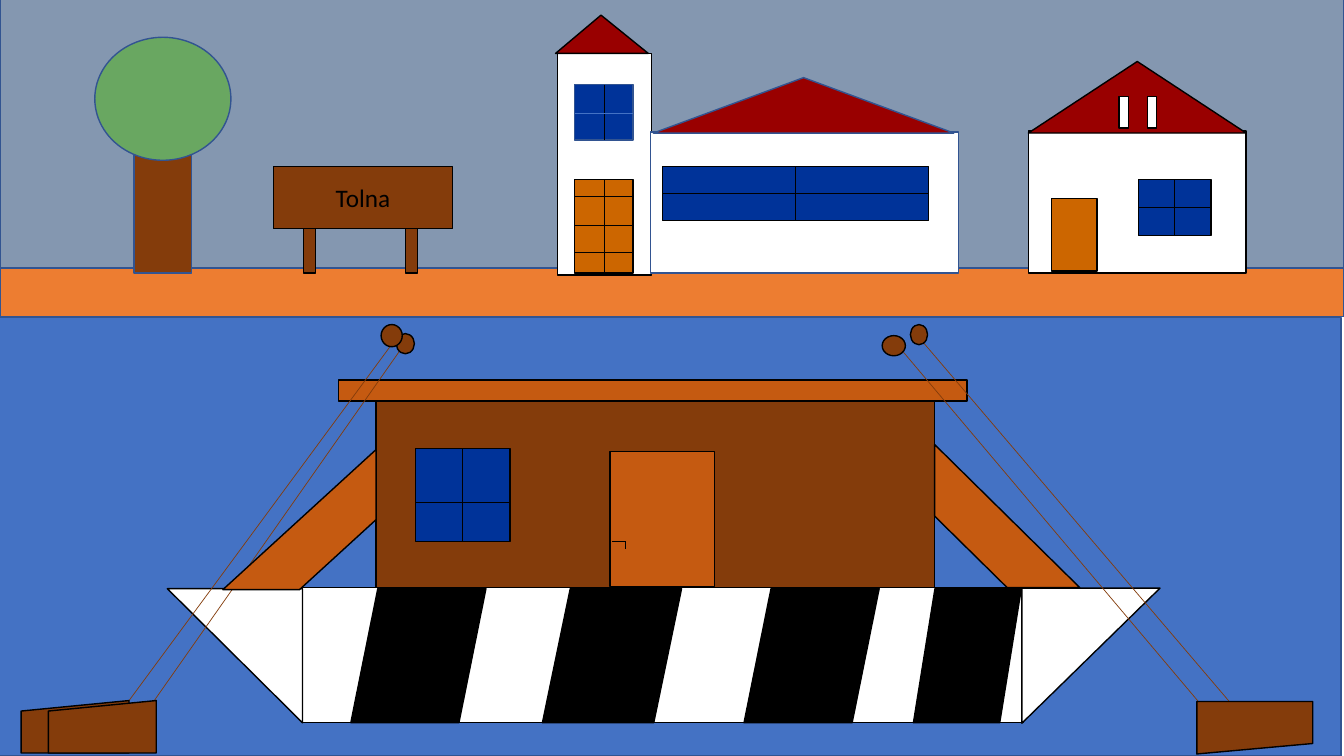
import pptx
import pptx.dml.color
import pptx.enum.shapes
import pptx.enum.text
import pptx.util
import pptx.oxml

PX = 9144  # 100 px to the inch
COLOURS = {
    "water": "4472C4", "edge": "325491", "black": "000000", "white": "FFFFFF",
    "wood": "843C0B", "plank": "C55A11", "glass": "003399", "door": "CC6600",
    "roof": "990000", "sky": "8497B0", "quay": "ED7D31", "leaf": "69A761",
}
KIND = pptx.enum.shapes.MSO_SHAPE
RECT = KIND.RECTANGLE

deck = pptx.Presentation()
deck.slide_width, deck.slide_height = 1333 * PX, 750 * PX
slide = deck.slides.add_slide(deck.slide_layouts[6])


def rgb(name):
    return pptx.dml.color.RGBColor.from_string(COLOURS[name])


def draw(kind, left, top, width, height, fill, outline="black", turn=0):
    shape = slide.shapes.add_shape(kind, left * PX, top * PX, width * PX, height * PX)
    shape.shadow.inherit = False
    shape.fill.solid()
    shape.fill.fore_color.rgb = rgb(fill)
    shape.line.color.rgb = rgb(outline)
    shape.line.width = pptx.util.Pt(1)
    shape.rotation = turn
    return shape


# The second helper needs the colour lookup above
def stroke(x1, y1, x2, y2, colour="black"):
    line = slide.shapes.add_connector(
        pptx.enum.shapes.MSO_CONNECTOR.STRAIGHT, x1 * PX, y1 * PX, x2 * PX, y2 * PX)
    line.line.color.rgb = rgb(colour)
    line.line.width = pptx.util.Pt(0.5)
    line._element.spPr.append(pptx.oxml.parse_xml(
        '<a:effectLst xmlns:a="http://schemas.openxmlformats.org/drawingml/2006/main"/>'))


# Water and hull
draw(RECT, -3, 315, 1333, 435, "water", "edge")
draw(RECT, 300, 583, 715, 134, "white")
draw(KIND.RIGHT_TRIANGLE, 166, 584, 134, 133, "white", turn=180)
draw(KIND.RIGHT_TRIANGLE, 1015, 582, 134, 137, "white", turn=90)
for left, width in [(348, 134), (538, 138), (738, 134), (906, 107)]:
    draw(KIND.FLOWCHART_DATA, left, 584, width, 133, "black")

# Cabin and its roof
draw(RECT, 373, 394, 554, 189, "wood")
draw(RECT, 336, 377, 623, 21, "plank")

# Mooring ropes, anchor blocks and bollards
for rope in [(904, 326, 1221, 698), (889, 341, 1192, 700),
             (389, 341, 128, 695), (400, 343, 153, 695)]:
    stroke(*rope, "wood")
for left, top, width, turn in [(1187, 696, 115, 180), (21, 695, 107, 0), (48, 695, 107, 0)]:
    draw(KIND.FLOWCHART_MANUAL_INPUT, left, top, width, 52, "wood", turn=turn)
for bollard in [(903, 322, 17, 20), (875, 333, 23, 20), (393, 331, 18, 20), (378, 322, 21, 22)]:
    draw(KIND.OVAL, *bollard, "wood")

# Cabin door with handle, and side braces
draw(RECT, 605, 448, 104, 134, "plank")
stroke(607, 537, 620, 537)
stroke(620, 537, 620, 545)
draw(KIND.DIAGONAL_STRIPE, 221, 446, 152, 139, "plank", turn=180)
draw(KIND.DIAGONAL_STRIPE, 928, 440, 142, 144, "plank", turn=270)

# Sky and quay
draw(RECT, 0, -5, 1333, 316, "sky", "edge")
draw(RECT, 0, 266, 1333, 48, "quay", "edge")

# Place-name sign
for left in (301, 402):
    draw(RECT, left, 227, 12, 44, "wood")
sign = draw(RECT, 271, 165, 178, 62, "wood").text_frame
sign.vertical_anchor = pptx.enum.text.MSO_ANCHOR.MIDDLE
sign.paragraphs[0].alignment = pptx.enum.text.PP_ALIGN.CENTER
place = sign.paragraphs[0].add_run()
place.text = "Tolna"
place.font.name = "Calibri"
place.font.size = pptx.util.Pt(18)
place.font.color.rgb = rgb("black")

# Tower and hall
draw(RECT, 553, 53, 93, 220, "white")
draw(KIND.ISOSCELES_TRIANGLE, 551, 15, 92, 38, "roof").adjustments[0] = 0.49
draw(RECT, 645, 131, 306, 140, "white", "edge")
draw(KIND.ISOSCELES_TRIANGLE, 648, 77, 298, 55, "roof", "edge")

# House
draw(RECT, 1020, 130, 216, 141, "white")
draw(KIND.ISOSCELES_TRIANGLE, 1020, 61, 216, 71, "roof")
for left in (1110, 1138):
    draw(RECT, left, 96, 9, 31, "white")
draw(RECT, 1043, 197, 45, 72, "door")

# Tree
draw(RECT, 133, 149, 57, 122, "wood", "edge")
draw(KIND.OVAL, 94, 37, 135, 122, "leaf", "edge")

# Paned windows and tower door: frame, fill, outline, rail heights, rail colour
for left, top, width, height, fill, outline, rails, rail_colour in [
    (412, 445, 94, 92, "glass", "black", [498], "black"),
    (570, 84, 58, 55, "glass", "edge", [112], "water"),
    (570, 178, 58, 93, "door", "black", [195, 224, 250], "black"),
    (657, 165, 264, 54, "glass", "black", [192], "black"),
    (1129, 178, 72, 56, "glass", "black", [206], "black"),
]:
    draw(RECT, left, top, width, height, fill, outline)
    middle = left + width // 2
    stroke(middle, top, middle, top + height)
    for rail in rails:
        stroke(left, rail, left + width, rail, rail_colour)

deck.save("out.pptx")
